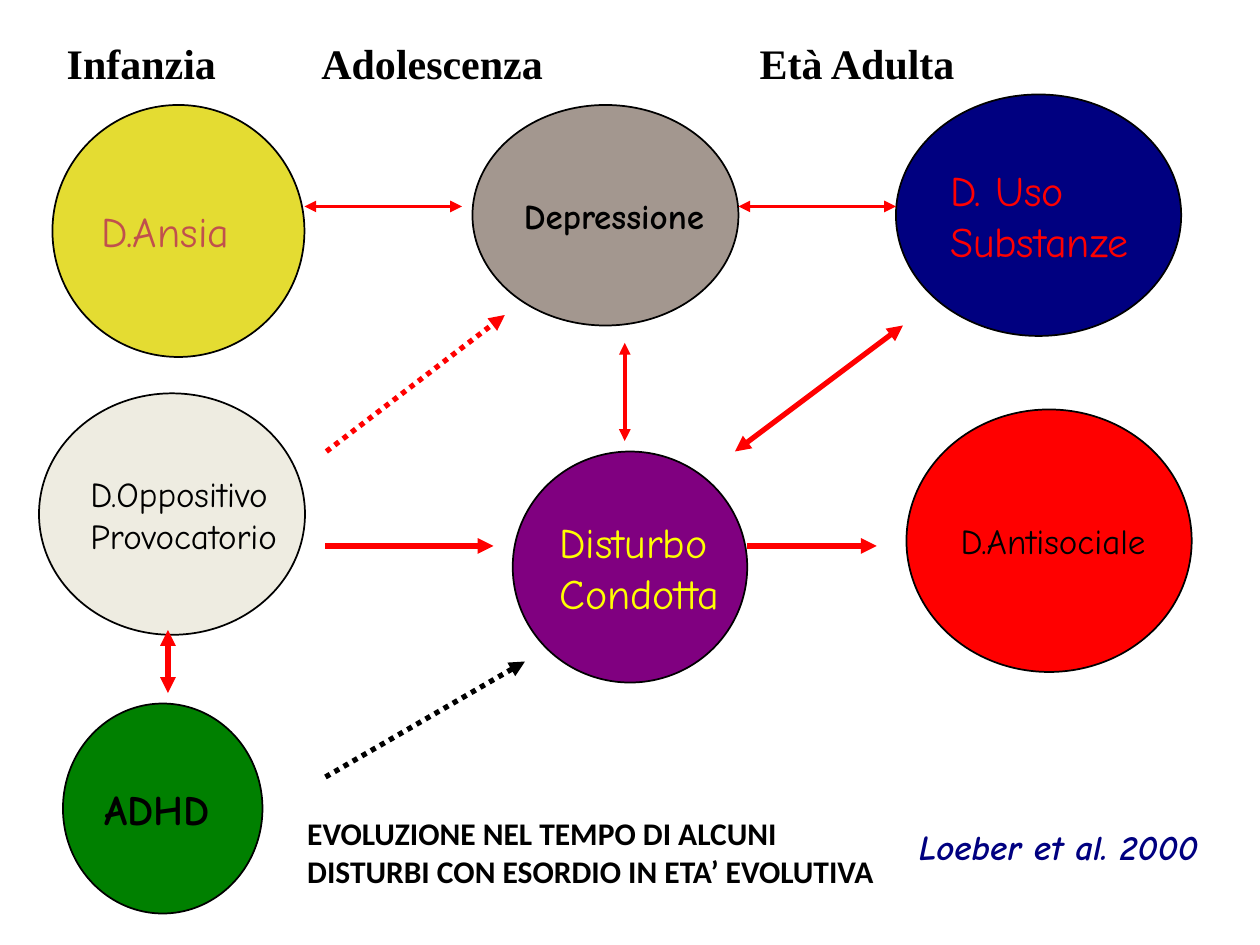
from lxml import etree
from pptx import Presentation
from pptx.dml.color import RGBColor
from pptx.enum import dml, shapes, text
from pptx.oxml.ns import qn
from pptx.util import Pt

COLOURS = {
    "black": "000000", "red": "FF0000", "navy": "000080", "yellow": "FFFF00",
    "mustard": "E4DC32", "brick": "C0504D", "taupe": "A3978F",
    "ivory": "EEECE1", "purple": "800080", "green": "008000",
}
COMIC = "Comic Neue"

# lines of text, (left, top, width, height), fill, text colour, size, bold
DISORDERS = [
    (["D.Antisociale"], (518, 234, 163, 150), "red", "black", 20, False),
    (["D.Ansia"], (30, 60, 144, 144), "mustard", "brick", 24, False),
    (["Depressione"], (270, 60, 152, 126), "taupe", "black", 20, True),
    (["D. Uso", "Substanze"], (512, 54, 163, 138), "navy", "red", 24, False),
    (["D.Oppositivo", "Provocatorio"], (22.3, 224.8, 152, 138), "ivory", "black", 20, False),
    (["Disturbo", "Condotta"], (293, 258, 134, 132), "purple", "yellow", 24, False),
    (["ADHD"], (36, 402, 114, 120), "green", "black", 24, True),
]

# start, end, colour, width, both ends pointed, dotted
ARROWS = [
    ((420, 258), (516, 186), "red", 3, True, False),
    ((427, 312), (501, 312), "red", 3, False, False),
    ((186.5, 258), (288.5, 180), "red", 3, False, True),
    ((186, 312), (282, 312), "red", 3, False, False),
    ((186, 444), (300, 378), "black", 3, False, True),
    ((96, 396), (96, 360), "red", 3, True, False),
    ((174, 118), (264, 118), "red", 2.25, True, False),
    ((422, 118), (512, 118), "red", 2.25, True, False),
    ((357, 196), (357, 252), "red", 2.25, True, False),
]

AGES = ["Infanzia", "Adolescenza", "Età Adulta"]
AGE_STOPS = [145.5, 396]
TITLE = "EVOLUZIONE NEL TEMPO DI ALCUNI DISTURBI CON ESORDIO IN ETA’ EVOLUTIVA"
SOURCE = "Loeber et al. 2000"


def rgb(name):
    return RGBColor.from_string(COLOURS[name])


def write(frame, lines, font, size, colour="black", bold=False, italic=False,
          wrap=True, anchor=text.MSO_ANCHOR.TOP):
    frame.word_wrap = wrap
    frame.vertical_anchor = anchor
    for i, line in enumerate(lines):
        paragraph = frame.add_paragraph() if i else frame.paragraphs[0]
        paragraph.alignment = text.PP_ALIGN.LEFT
        run = paragraph.add_run()
        run.text = line
        run.font.name, run.font.size = font, Pt(size)
        run.font.bold, run.font.italic = bold, italic
        run.font.color.rgb = rgb(colour)


def add_text(slide, box, lines, **style):
    frame = slide.shapes.add_textbox(*map(Pt, box)).text_frame
    write(frame, lines, **style)
    return frame


def add_disorder(slide, lines, box, fill, colour, size, bold):
    oval = slide.shapes.add_shape(shapes.MSO_SHAPE.OVAL, *map(Pt, box))
    oval.shadow.inherit = False
    oval.fill.solid()
    oval.fill.fore_color.rgb = rgb(fill)
    oval.line.color.rgb = rgb("black")
    oval.line.width = Pt(1)
    write(oval.text_frame, lines, font=COMIC, size=size, colour=colour, bold=bold,
          wrap=False, anchor=text.MSO_ANCHOR.MIDDLE)


def add_arrow(slide, start, end, colour, width, both, dotted):
    arrow = slide.shapes.add_connector(
        shapes.MSO_CONNECTOR.STRAIGHT, *map(Pt, start + end))
    arrow.line.color.rgb = rgb(colour)
    arrow.line.width = Pt(width)
    if dotted:
        arrow.line.dash_style = dml.MSO_LINE.ROUND_DOT
    properties = arrow._element.spPr
    line = properties.find(qn("a:ln"))
    for tag in ["a:headEnd", "a:tailEnd"] if both else ["a:tailEnd"]:
        etree.SubElement(line, qn(tag), type="triangle")
    etree.SubElement(properties, qn("a:effectLst"))


def set_tab_stops(paragraph, stops):
    tabs = etree.SubElement(paragraph._p.get_or_add_pPr(), qn("a:tabLst"))
    for stop in stops:
        etree.SubElement(tabs, qn("a:tab"), pos=str(int(Pt(stop))), algn="l")


def main():
    deck = Presentation()
    deck.slide_width, deck.slide_height = Pt(720), Pt(540)
    slide = deck.slides.add_slide(deck.slide_layouts[6])

    for disorder in DISORDERS:
        add_disorder(slide, *disorder)
    for arrow in ARROWS:
        add_arrow(slide, *arrow)

    ages = add_text(slide, (31, 18, 671, 36), ["\t".join(AGES)],
                    font="Times New Roman", size=24, bold=True)
    set_tab_stops(ages.paragraphs[0], AGE_STOPS)
    add_text(slide, (518, 468, 178, 31), [SOURCE], font=COMIC, size=20,
             colour="navy", bold=True, italic=True, wrap=False)
    add_text(slide, (168.5, 461.5, 349, 51), [TITLE], font="Calibri", size=18, bold=True)

    deck.save("out.pptx")


if __name__ == "__main__":
    main()
